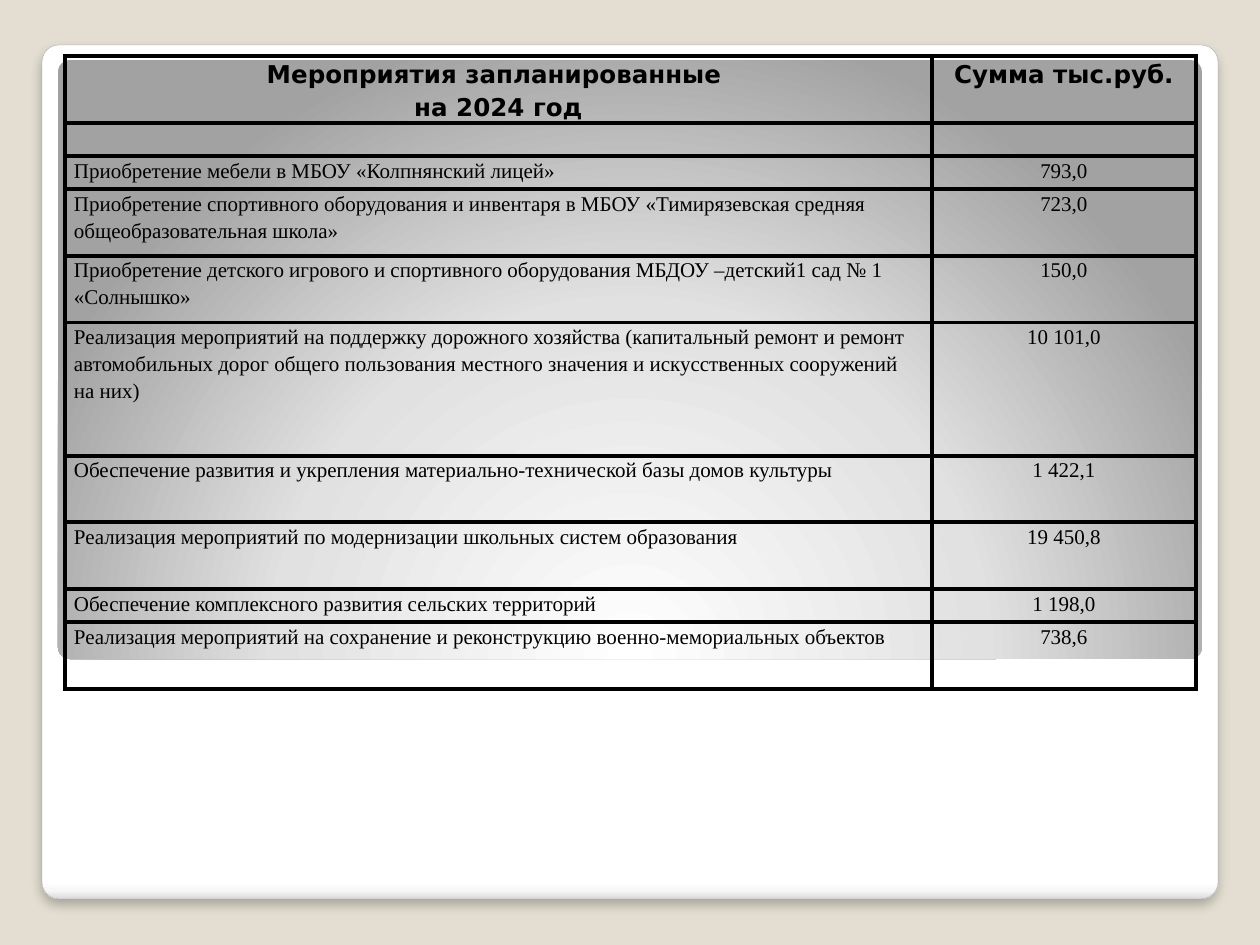
from typing import NamedTuple

from lxml.etree import SubElement
from pptx import Presentation
from pptx.dml.color import RGBColor
from pptx.enum.shapes import MSO_SHAPE
from pptx.enum.text import PP_ALIGN
from pptx.oxml import parse_xml
from pptx.oxml.ns import nsdecls, qn
from pptx.util import Emu, Pt

COLORS = {
    "background": "E3DED1",
    "white": "FFFFFF",
    "card_shade": "F7F7F7",
    "card_edge": "DADADA",
    "card_line": "A4A4A4",
    "panel_middle": "E1E1E1",
    "panel_edge": "A2A2A2",
    "black": "000000",
}
PIXELS_PER_INCH = 126
ROW_UNIT = 100 / 3  # height in px of a one-line row
CARD_DIRECTION = '<a:lin ang="5400000" scaled="0"/>'
PANEL_DIRECTION = (
    '<a:path path="circle"><a:fillToRect l="50000" t="175000" r="50000" b="-75000"/></a:path>'
)


class Box(NamedTuple):
    left: int
    top: int
    width: int
    height: int


class Row(NamedTuple):
    units: int
    activity: str = ""
    amount: str = ""


HEADER = Row(2, "Мероприятия запланированные \nна 2024 год", "Сумма тыс.руб.")
ROWS = [
    HEADER,
    Row(1),
    Row(1, "Приобретение мебели в МБОУ «Колпнянский лицей»", "793,0"),
    Row(2, "Приобретение спортивного оборудования и инвентаря в МБОУ "
           "«Тимирязевская средняя общеобразовательная школа»", "723,0"),
    Row(2, "Приобретение детского игрового и спортивного оборудования "
           "МБДОУ –детский1 сад № 1 «Солнышко»", "150,0"),
    Row(4, "Реализация мероприятий на поддержку дорожного хозяйства "
           "(капитальный ремонт и ремонт автомобильных дорог общего пользования "
           "местного значения и искусственных сооружений на них)", "10 101,0"),
    Row(2, "Обеспечение развития и укрепления материально-технической базы "
           "домов культуры", "1 422,1"),
    Row(2, "Реализация мероприятий по модернизации школьных систем образования",
        "19 450,8"),
    Row(1, "Обеспечение комплексного развития сельских территорий", "1 198,0"),
    Row(2, "Реализация мероприятий на сохранение и реконструкцию "
           "военно-мемориальных объектов", "738,6"),
]


def px(length: float) -> Emu:
    return Emu(round(length * 914400 / PIXELS_PER_INCH))


def rgb(name: str) -> RGBColor:
    return RGBColor.from_string(COLORS[name])


def add_rounded_panel(page, box: Box, stops: list[tuple[int, str]], direction: str):
    """Add a rounded rectangle with a gradient of (percent, colour) stops."""
    panel = page.shapes.add_shape(MSO_SHAPE.ROUNDED_RECTANGLE, *map(px, box))
    panel.adjustments[0] = 0.02
    panel.shadow.inherit = False
    panel.line.fill.background()
    stop_list = "".join(
        f'<a:gs pos="{percent * 1000}"><a:srgbClr val="{COLORS[name]}"/></a:gs>'
        for percent, name in stops
    )
    gradient = parse_xml(
        f'<a:gradFill {nsdecls("a")} rotWithShape="1">'
        f"<a:gsLst>{stop_list}</a:gsLst>{direction}</a:gradFill>"
    )
    panel._element.spPr.find(qn("a:prstGeom")).addnext(gradient)
    return panel


def add_soft_shadow(panel) -> None:
    effects = panel._element.spPr.find(qn("a:effectLst"))
    effects.append(parse_xml(
        f'<a:outerShdw {nsdecls("a")} blurRad="{Pt(6)}" dist="{Pt(4)}" dir="5400000" '
        f'algn="t" rotWithShape="0"><a:srgbClr val="{COLORS["black"]}">'
        '<a:alpha val="25000"/></a:srgbClr></a:outerShdw>'
    ))


def style_cell(cell) -> None:
    """Give a cell black borders, narrow margins and no fill."""
    cell.margin_left = cell.margin_right = px(9)
    cell.margin_top = cell.margin_bottom = 0
    properties = cell._tc.get_or_add_tcPr()
    for side in ("lnL", "lnR", "lnT", "lnB"):
        border = SubElement(properties, qn(f"a:{side}"), w=str(Pt(2.5)))
        fill = SubElement(border, qn("a:solidFill"))
        SubElement(fill, qn("a:srgbClr"), val=COLORS["black"])
    cell.fill.background()


def write_cell(cell, text: str, is_header: bool, centered: bool) -> None:
    cell.text = text
    for para in cell.text_frame.paragraphs:
        para.alignment = PP_ALIGN.CENTER if centered else PP_ALIGN.LEFT
        para.line_spacing = 1.15
        para.font.name = "DejaVu Sans" if is_header else "Times New Roman"
        para.font.size = Pt(14 if is_header else 12)
        para.font.bold = is_header
        para.font.color.rgb = rgb("black")


def add_budget_table(page, box: Box, column_widths: list[int]) -> None:
    frame = page.shapes.add_table(len(ROWS), len(column_widths), *map(px, box))
    table = frame.table
    table.first_row = table.horz_banding = False
    for column, width in zip(table.columns, column_widths):
        column.width = px(width)
    for row_index, row in enumerate(ROWS):
        table.rows[row_index].height = px(row.units * ROW_UNIT)
        is_header = row is HEADER
        for column_index, text in enumerate((row.activity, row.amount)):
            cell = table.cell(row_index, column_index)
            style_cell(cell)
            write_cell(cell, text, is_header, is_header or column_index == 1)


def main() -> None:
    deck = Presentation()
    deck.slide_width, deck.slide_height = px(1260), px(945)
    page = deck.slides.add_slide(deck.slide_layouts[6])
    page.background.fill.solid()
    page.background.fill.fore_color.rgb = rgb("background")

    card = add_rounded_panel(
        page, Box(42, 45, 1176, 854),
        [(0, "white"), (98, "white"), (99, "card_shade"), (100, "card_edge")],
        CARD_DIRECTION,
    )
    card.line.color.rgb = rgb("card_line")
    card.line.width = Pt(0.16)
    add_soft_shadow(card)

    add_rounded_panel(
        page, Box(58, 60, 1144, 599),
        [(0, "white"), (55, "panel_middle"), (100, "panel_edge")],
        PANEL_DIRECTION,
    )
    add_budget_table(page, Box(65, 56, 1131, 633), [867, 264])
    deck.save("out.pptx")


if __name__ == "__main__":
    main()
